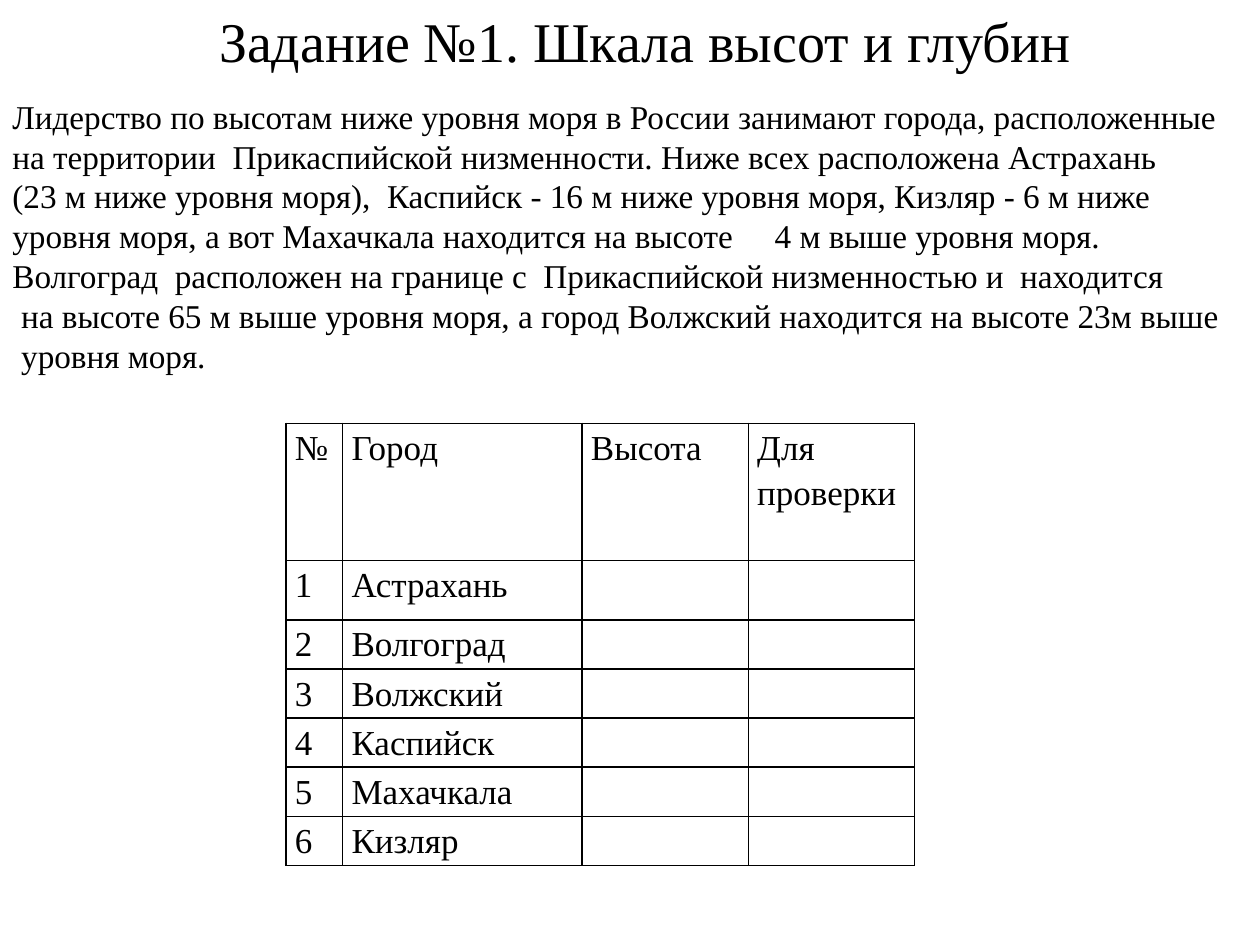
from lxml import etree
from pptx import Presentation
from pptx.dml.color import RGBColor
from pptx.enum import text as t
from pptx.oxml import ns
from pptx.util import Inches, Pt

BLACK = RGBColor(0, 0, 0)
FONT = "Times New Roman"

TITLE = "Задание №1. Шкала высот и глубин"
# Each line: text, left indent in inches; a tab marks the wide gap
LINES = [
    ("Лидерство по высотам ниже уровня моря в России занимают города, расположенные", 0),
    ("на территории  Прикаспийской низменности. Ниже всех расположена Астрахань", 0),
    ("(23 м ниже уровня моря),  Каспийск - 16 м ниже уровня моря, Кизляр - 6 м ниже", 0),
    ("уровня моря, а вот Махачкала находится на высоте\t4 м выше уровня моря.", 0),
    ("Волгоград  расположен на границе с  Прикаспийской низменностью и  находится", 0),
    ("на высоте 65 м выше уровня моря, а город Волжский находится на высоте 23м выше", 0.07),
    ("уровня моря.", 0.07),
]
TAB = 6.05
HEAD = ["№", "Город", "Высота", "Для проверки"]
CITIES = ["Астрахань", "Волгоград", "Волжский", "Каспийск", "Махачкала", "Кизляр"]
COLS = [0.45, 1.9, 1.32, 1.32]
ROWS = [1.09, 0.47] + [0.39] * 5


def sub(parent, tag, **attrs):
    return etree.SubElement(parent, ns.qn(tag), attrs)


def add_run(para, words, size):
    run = para.add_run()
    run.text = words
    run.font.size = Pt(size)
    run.font.name = FONT
    run.font.color.rgb = BLACK


def add_box(slide, left, top, width, height, wrap):
    box = slide.shapes.add_textbox(*map(Inches, (left, top, width, height)))
    box.text_frame.word_wrap = wrap
    return box.text_frame


def style_cell(cell, words):
    cell.margin_left = cell.margin_right = Inches(0.07)
    cell.margin_top = cell.margin_bottom = 0
    para = cell.text_frame.paragraphs[0]
    para.line_spacing = 1.15
    para.font.size = Pt(20)
    if words:
        add_run(para, words, 20)
    else:
        sub(para._p, "a:endParaRPr", sz="2000")
    # Borders come before the fill in the cell properties
    props = cell._tc.get_or_add_tcPr()
    for side in ("a:lnL", "a:lnR", "a:lnT", "a:lnB"):
        line = sub(props, side, w=str(Pt(1)))
        sub(sub(line, "a:solidFill"), "a:srgbClr", val=str(BLACK))
    cell.fill.background()


def main():
    prs = Presentation()
    prs.slide_width, prs.slide_height = Inches(10), Inches(7.5)
    slide = prs.slides.add_slide(prs.slide_layouts[6])

    # Title
    frame = add_box(slide, 1.64, 0, 7.03, 0.64, False)
    add_run(frame.paragraphs[0], TITLE, 32)

    # Table of cities
    grid = slide.shapes.add_table(
        len(ROWS), len(COLS), Inches(2.27), Inches(3.36),
        Inches(sum(COLS)), Inches(sum(ROWS))).table
    grid.first_row = grid.horz_banding = False
    for col, width in zip(grid.columns, COLS):
        col.width = Inches(width)
    for row, height in zip(grid.rows, ROWS):
        row.height = Inches(height)
    data = [HEAD] + [[str(n), city, "", ""] for n, city in enumerate(CITIES, 1)]
    for row, words in zip(grid.rows, data):
        for cell, word in zip(row.cells, words):
            style_cell(cell, word)

    # Story about heights
    frame = add_box(slide, 0, 0.7, 9.92, 2.34, True)
    frame.vertical_anchor = t.MSO_ANCHOR.MIDDLE
    for i, (words, indent) in enumerate(LINES):
        para = frame.add_paragraph() if i else frame.paragraphs[0]
        add_run(para, words, 19)
        props = para._p.get_or_add_pPr()
        if indent:
            props.set("marL", str(Inches(indent)))
        if "\t" in words:
            sub(sub(props, "a:tabLst"), "a:tab", pos=str(Inches(TAB)), algn="l")

    prs.save("out.pptx")


if __name__ == "__main__":
    main()
